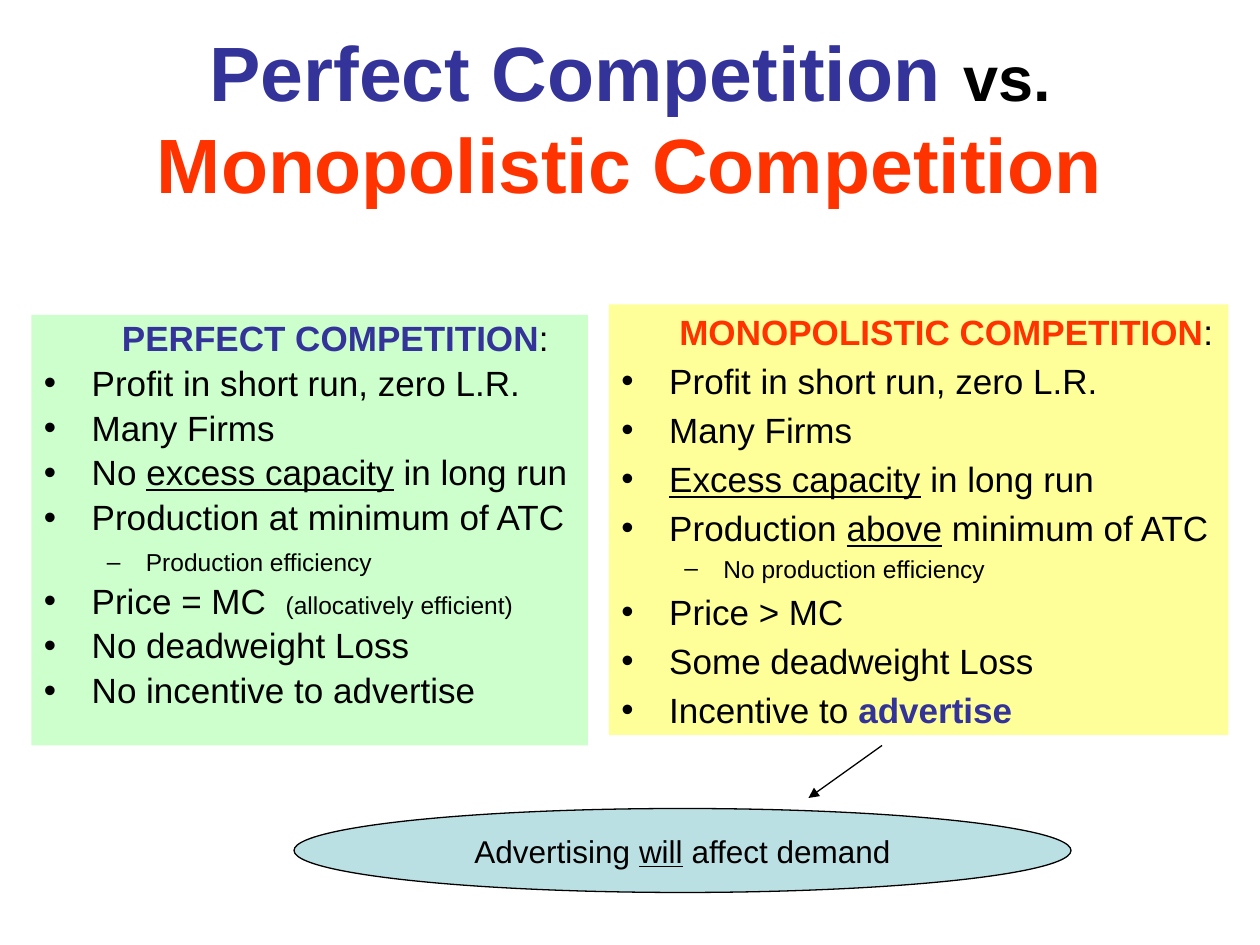
from lxml.etree import SubElement
from pptx import Presentation
from pptx.dml.color import RGBColor
from pptx.enum.shapes import MSO_CONNECTOR, MSO_SHAPE
from pptx.enum.text import MSO_ANCHOR, MSO_AUTO_SIZE, PP_ALIGN
from pptx.oxml.ns import qn
from pptx.util import Inches, Pt

BLACK = RGBColor(0x00, 0x00, 0x00)
NAVY = RGBColor(0x33, 0x33, 0x99)
RED = RGBColor(0xFF, 0x33, 0x00)
GREEN = RGBColor(0xCC, 0xFF, 0xCC)
YELLOW = RGBColor(0xFF, 0xFF, 0x99)
TEAL = RGBColor(0xBB, 0xE0, 0xE3)

LINE = {"underline": True}
NOTE = {"size": 14}

PERFECT = [
    ["Profit in short run, zero L.R."],
    ["Many Firms"],
    ["No ", ("excess capacity", LINE), " in long run"],
    ["Production at minimum of ATC"],
    [("Production efficiency", NOTE)],
    ["Price = MC  ", ("(allocatively efficient)", NOTE)],
    ["No deadweight Loss"],
    ["No incentive to advertise"],
]
MONOPOLY = [
    ["Profit in short run, zero L.R."],
    ["Many Firms"],
    [("Excess capacity", LINE), " in long run"],
    ["Production ", ("above", LINE), " minimum of ATC"],
    [("No production efficiency", NOTE)],
    ["Price > MC"],
    ["Some deadweight Loss"],
    ["Incentive to ", ("advertise", {"bold": True, "color": NAVY})],
]


def grid(*cells):
    """Turn cells of a 120 by 90 grid into lengths."""
    return [Inches(cell / 12) for cell in cells]


def write(para, parts, size=20):
    """Fill a paragraph with parts: plain text, or text with a style."""
    for part in parts:
        text, style = (part, {}) if isinstance(part, str) else part
        run = para.add_run()
        run.text = text
        font = run.font
        font.name = "Arial"
        font.size = Pt(style.get("size", size))
        font.bold = style.get("bold", False)
        font.underline = style.get("underline", False)
        font.color.rgb = style.get("color", BLACK)


def indent(para, left, hang=0, mark=None):
    props = para._p.get_or_add_pPr()
    props.set("marL", str(Inches(left)))
    props.set("indent", str(-Inches(hang)))
    if mark:
        SubElement(props, qn("a:buFont")).set("typeface", "Arial")
        SubElement(props, qn("a:buChar")).set("char", mark)


def add_title(slide, box):
    title = slide.shapes.title
    title.left, title.top, title.width, title.height = grid(*box)
    frame = title.text_frame
    frame.word_wrap = True
    frame.auto_size = MSO_AUTO_SIZE.NONE
    frame.vertical_anchor = MSO_ANCHOR.MIDDLE
    para = frame.paragraphs[0]
    para.alignment = PP_ALIGN.CENTER
    write(para, [
        ("Perfect Competition ", {"bold": True, "color": NAVY}),
        ("vs.", {"bold": True, "size": 36}),
        (" Monopolistic Competition", {"bold": True, "color": RED}),
    ], 44)


def add_panel(slide, box, fill, head, color, inset, items, pitch, gap):
    """Place a filled list; gap is the space above its second-level item."""
    panel = slide.shapes.add_textbox(*grid(*box))
    panel.fill.solid()
    panel.fill.fore_color.rgb = fill
    frame = panel.text_frame
    frame.word_wrap = True
    para = frame.paragraphs[0]
    para.line_spacing = pitch
    indent(para, inset)
    write(para, [(head, {"bold": True, "color": color}), ":"])
    for item in items:
        para = frame.add_paragraph()
        sub = item[0][1] is NOTE
        para.level = int(sub)
        para.line_spacing = pitch
        para.space_before = Pt(gap if sub else 4)
        indent(para, *((0.81, 0.31, "–") if sub else (0.38, 0.38, "•")))
        write(para, item)


def add_callout(slide, box, start, end):
    """Place the ellipse and the arrow that leads to it."""
    arrow = slide.shapes.add_connector(
        MSO_CONNECTOR.STRAIGHT, *grid(*start), *grid(*end))
    arrow.line.color.rgb = BLACK
    arrow.line.width = Pt(0.75)
    SubElement(arrow.line._get_or_add_ln(), qn("a:tailEnd")).set("type", "triangle")
    SubElement(arrow._element.spPr, qn("a:effectLst"))

    oval = slide.shapes.add_shape(MSO_SHAPE.OVAL, *grid(*box))
    oval.shadow.inherit = False
    oval.fill.solid()
    oval.fill.fore_color.rgb = TEAL
    oval.line.color.rgb = BLACK
    oval.line.width = Pt(0.75)
    frame = oval.text_frame
    frame.word_wrap = False
    frame.vertical_anchor = MSO_ANCHOR.MIDDLE
    para = frame.paragraphs[0]
    para.alignment = PP_ALIGN.CENTER
    write(para, ["Advertising ", ("will", LINE), " affect demand"], 18)


def main():
    deck = Presentation()
    deck.slide_width, deck.slide_height = grid(120, 90)
    slide = deck.slides.add_slide(deck.slide_layouts[5])
    add_title(slide, (6, 3.6, 108, 15))
    add_panel(slide, (3, 30, 53, 41), GREEN, "PERFECT COMPETITION",
              NAVY, 0.62, PERFECT, 0.9, 7)
    add_panel(slide, (58, 29, 59, 41), YELLOW, "MONOPOLISTIC COMPETITION",
              RED, 0.46, MONOPOLY, 1, 2.8)
    add_callout(slide, (28, 77, 74, 8), (84, 71), (77, 76))
    deck.save("out.pptx")


if __name__ == "__main__":
    main()
